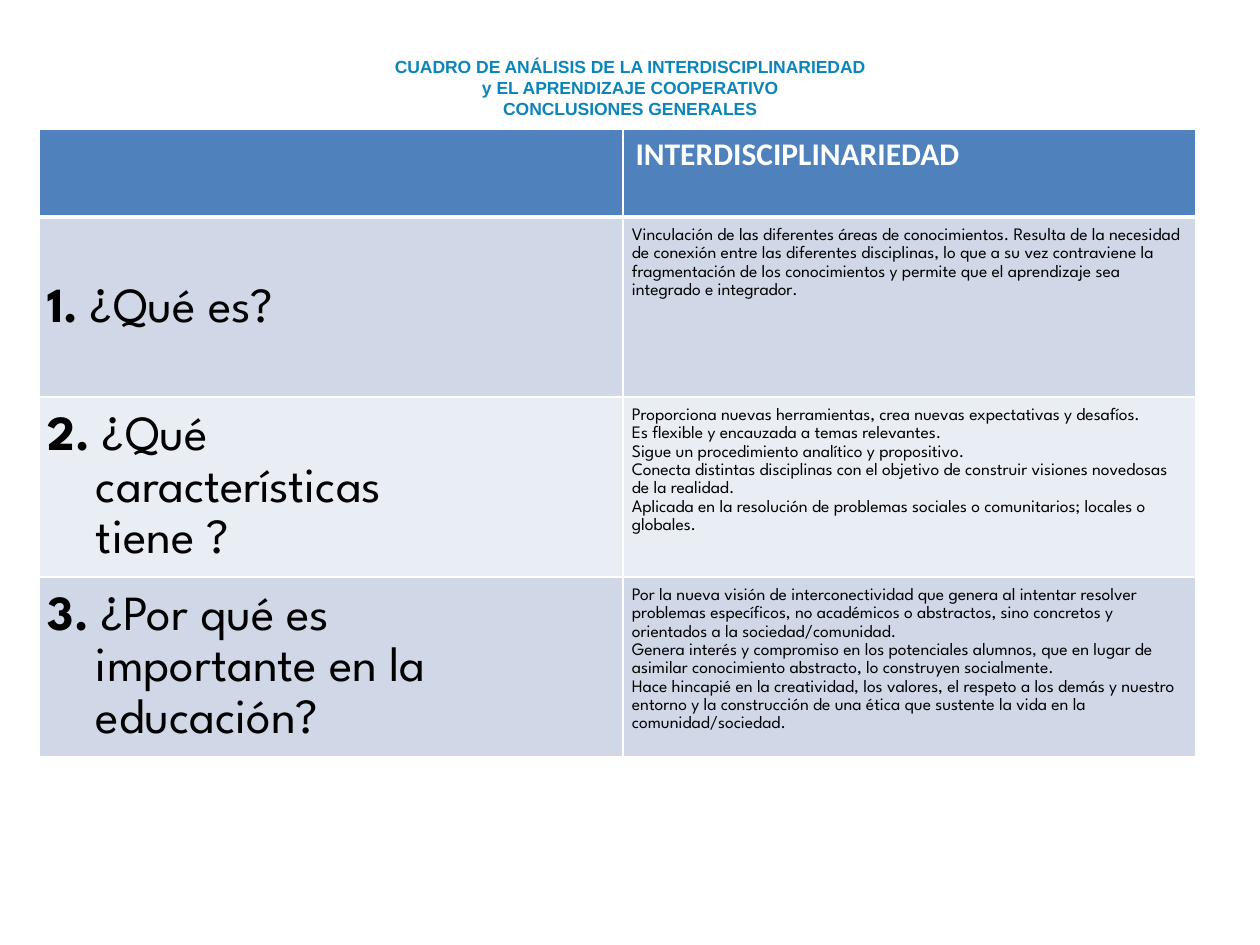
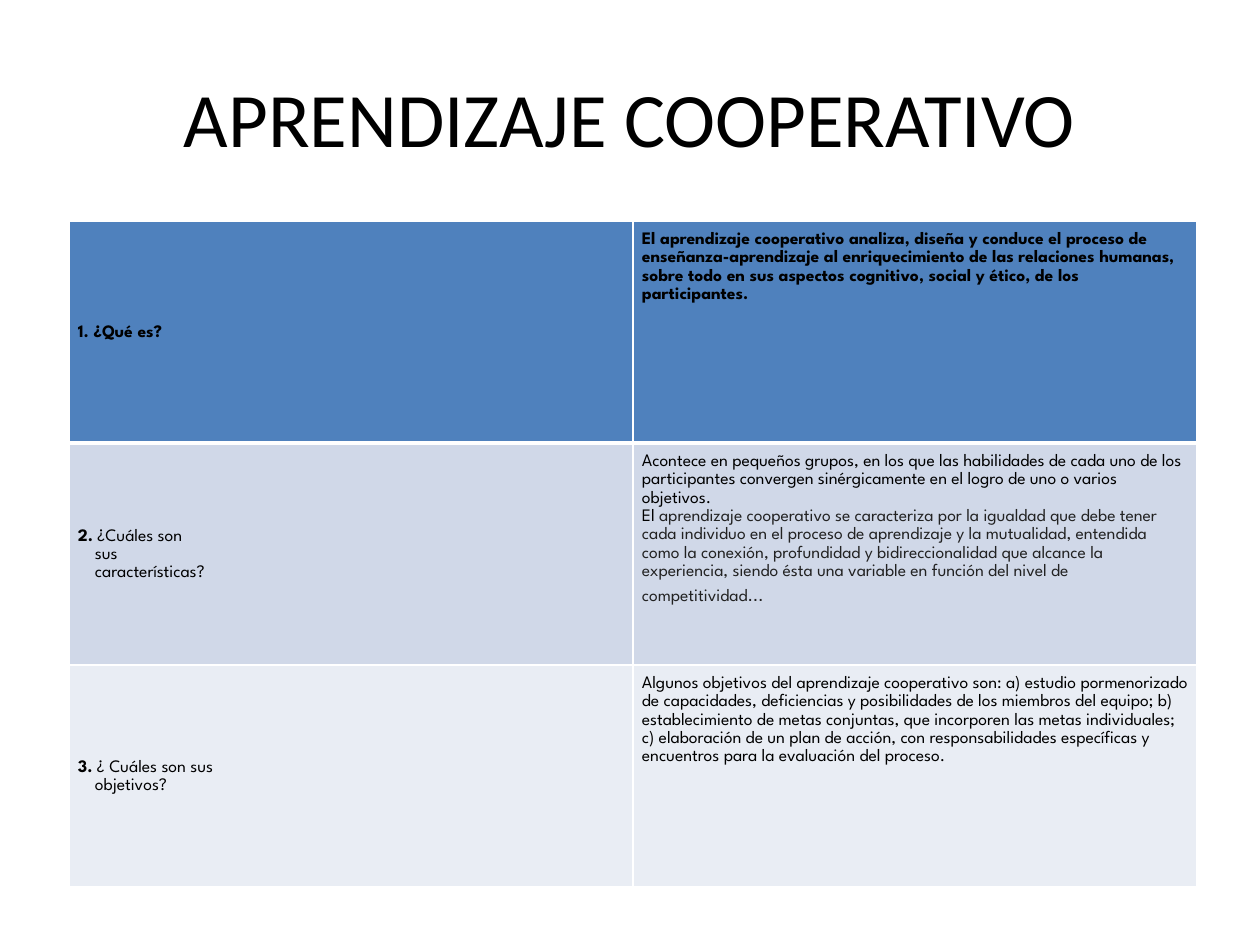
"""Builds two slides that compare interdisciplinarity and cooperative learning."""
from lxml import etree
from pptx import Presentation
from pptx import util as u
from pptx.dml.color import RGBColor
from pptx.enum import text
from pptx.oxml import ns

PX = 914400 / 126
WHITE = RGBColor(0xFF, 0xFF, 0xFF)
BLACK = RGBColor(0x00, 0x00, 0x00)
CHARCOAL = RGBColor(0x22, 0x22, 0x22)
TEAL = RGBColor(0x0B, 0x85, 0xB9)
HEADER_BLUE = RGBColor(0x4F, 0x81, 0xBD)
BANDS = (RGBColor(0xD0, 0xD8, 0xE8), RGBColor(0xE9, 0xED, 0xF4))
BODY_FONT = "League Spartan"
TITLE_FONT = "Calibri"
ANSWER_SIZE = 10
CELL_INSET = 9
INDENT_PER_POINT = 1.72

OVERVIEW_TITLE = [
    "CUADRO DE ANÁLISIS DE LA INTERDISCIPLINARIEDAD",
    "y EL APRENDIZAJE COOPERATIVO",
    "CONCLUSIONES GENERALES",
]
OVERVIEW_HEADING = "INTERDISCIPLINARIEDAD"
OVERVIEW_ROWS = [
    (["1. ¿Qué es?"], [
        "Vinculación de las diferentes áreas de conocimientos. Resulta de la necesidad de "
        "conexión entre las diferentes disciplinas, lo que a su vez contraviene la "
        "fragmentación de los conocimientos y permite que el aprendizaje sea integrado e "
        "integrador.",
    ]),
    (["2. ¿Qué", "características", "tiene ?"], [
        "Proporciona nuevas herramientas, crea nuevas expectativas y desafíos.",
        "Es flexible y encauzada a temas relevantes.",
        "Sigue un procedimiento analítico y propositivo.",
        "Conecta distintas disciplinas con el objetivo de construir visiones novedosas de "
        "la realidad.",
        "Aplicada en la resolución de problemas sociales o comunitarios; locales o globales.",
    ]),
    (["3. ¿Por qué es", "importante en la", "educación?"], [
        "Por la nueva visión de interconectividad que genera al intentar resolver problemas "
        "específicos, no académicos o abstractos, sino concretos y orientados a la "
        "sociedad/comunidad.",
        "Genera interés y compromiso en los potenciales alumnos, que en lugar de asimilar "
        "conocimiento abstracto, lo construyen socialmente.",
        "Hace hincapié en la creatividad, los valores, el respeto a los demás y nuestro "
        "entorno y la construcción de una ética que sustente la vida en la "
        "comunidad/sociedad.",
    ]),
]

COOPERATIVE_TITLE = ["APRENDIZAJE COOPERATIVO"]
COOPERATIVE_ROWS = [
    (["1. ¿Qué es?"], [
        "El aprendizaje cooperativo analiza, diseña y conduce el proceso de "
        "enseñanza-aprendizaje al enriquecimiento de las relaciones humanas, sobre todo en "
        "sus aspectos cognitivo, social y ético, de los participantes.",
    ]),
    (["2. ¿Cuáles son", "sus", "características?"], [
        "Acontece en pequeños grupos, en los que las habilidades de cada uno de los "
        "participantes convergen sinérgicamente en el logro de uno o varios objetivos.",
        [
            ("El ", {}),
            ("aprendizaje cooperativo se caracteriza por la igualdad que debe tener cada "
             "individuo en el proceso de aprendizaje y la mutualidad, entendida como la "
             "conexión, profundidad y bidireccionalidad que alcance la experiencia, siendo "
             "ésta una variable en función del nivel de competitividad",
             {"color": CHARCOAL}),
            ("...", {"color": CHARCOAL, "font": "Arial", "size": 11}),
        ],
    ]),
    (["3. ¿ Cuáles son sus", "objetivos?"], [
        "Algunos objetivos del aprendizaje cooperativo son: a) estudio pormenorizado de "
        "capacidades, deficiencias y posibilidades de los miembros del equipo; b) "
        "establecimiento de metas conjuntas, que incorporen las metas individuales; c) "
        "elaboración de un plan de acción, con responsabilidades específicas y encuentros "
        "para la evaluación del proceso.",
    ]),
]


def px(length):
    return u.Emu(round(length * PX))


def format_run(run, size=ANSWER_SIZE, bold=False, color=BLACK, font=BODY_FONT):
    run.font.size = u.Pt(size)
    run.font.bold = bold
    run.font.color.rgb = color
    run.font.name = font


def add_title_slide(presentation, lines, box, **style):
    slide = presentation.slides.add_slide(presentation.slide_layouts[5])
    title = slide.shapes.title
    title.left, title.top, title.width, title.height = map(px, box)
    frame = title.text_frame
    frame.text = "\n".join(lines)
    frame.word_wrap = True
    frame.auto_size = text.MSO_AUTO_SIZE.NONE
    frame.vertical_anchor = text.MSO_ANCHOR.MIDDLE
    for paragraph in frame.paragraphs:
        paragraph.alignment = text.PP_ALIGN.CENTER
        for run in paragraph.runs:
            format_run(run, **style)
    return slide


def add_borders(cell, top, bottom):
    properties = cell._tc.get_or_add_tcPr()
    for side, points in (("L", 1), ("R", 1), ("T", top), ("B", bottom)):
        line = etree.SubElement(properties, ns.qn(f"a:ln{side}"), w=str(u.Pt(points)))
        fill = etree.SubElement(line, ns.qn("a:solidFill"))
        etree.SubElement(fill, ns.qn("a:srgbClr"), val=str(WHITE))


def add_table(slide, left, top, columns, rows):
    table = slide.shapes.add_table(
        len(rows), len(columns), px(left), px(top), px(sum(columns)), px(sum(rows))).table
    table.first_row = table.horz_banding = False
    for column, width in zip(table.columns, columns):
        column.width = px(width)
    for index, (row, height) in enumerate(zip(table.rows, rows)):
        row.height = px(height)
        for cell in row.cells:
            add_borders(cell, 3 if index == 1 else 1, 3 if index == 0 else 1)
            cell.fill.solid()
            cell.fill.fore_color.rgb = BANDS[(index - 1) % 2] if index else HEADER_BLUE
    return table


def write_cell(cell, paragraphs, size, bold, indent=0):
    cell.margin_left = cell.margin_right = px(CELL_INSET)
    cell.margin_top = cell.margin_bottom = px(CELL_INSET)
    frame = cell.text_frame
    for index, runs in enumerate(paragraphs):
        paragraph = frame.add_paragraph() if index else frame.paragraphs[0]
        paragraph.line_spacing = 1.15
        if index and indent:
            paragraph._p.get_or_add_pPr().set("marL", str(px(indent)))
        for words, style in [(runs, {})] if isinstance(runs, str) else runs:
            run = paragraph.add_run()
            run.text = words
            format_run(run, **{"size": size, "bold": bold, **style})


def fill_rows(table, first_row, content, question_size):
    for index, (question, answer) in enumerate(content, first_row):
        bold = index == 0
        number, words = question[0].split(" ", 1)
        first_line = [(number, {"bold": True}), (" " + words, {})]
        question_cell, answer_cell = table.rows[index].cells
        question_cell.vertical_anchor = text.MSO_ANCHOR.MIDDLE
        write_cell(question_cell, [first_line, *question[1:]], question_size, bold,
                   round(question_size * INDENT_PER_POINT))
        write_cell(answer_cell, answer, ANSWER_SIZE, bold)


def main():
    presentation = Presentation()
    presentation.slide_width, presentation.slide_height = px(1260), px(945)

    overview = add_title_slide(presentation, OVERVIEW_TITLE, (0, 49, 1260, 77),
                               size=10, bold=True, color=TEAL, font="Arial")
    table = add_table(overview, 39, 129, (584, 573), (88, 180, 180, 180))
    heading = table.cell(0, 1)
    heading.text_frame.text = OVERVIEW_HEADING
    format_run(heading.text_frame.paragraphs[0].runs[0], 18, True, WHITE, TITLE_FONT)
    fill_rows(table, 1, OVERVIEW_ROWS, 28)

    cooperative = add_title_slide(presentation, COOPERATIVE_TITLE, (63, 38, 1134, 158),
                                  size=44, font=TITLE_FONT)
    table = add_table(cooperative, 69, 221, (564, 564), (222, 222, 222))
    fill_rows(table, 0, COOPERATIVE_ROWS, ANSWER_SIZE)

    presentation.save("out.pptx")


if __name__ == "__main__":
    main()
